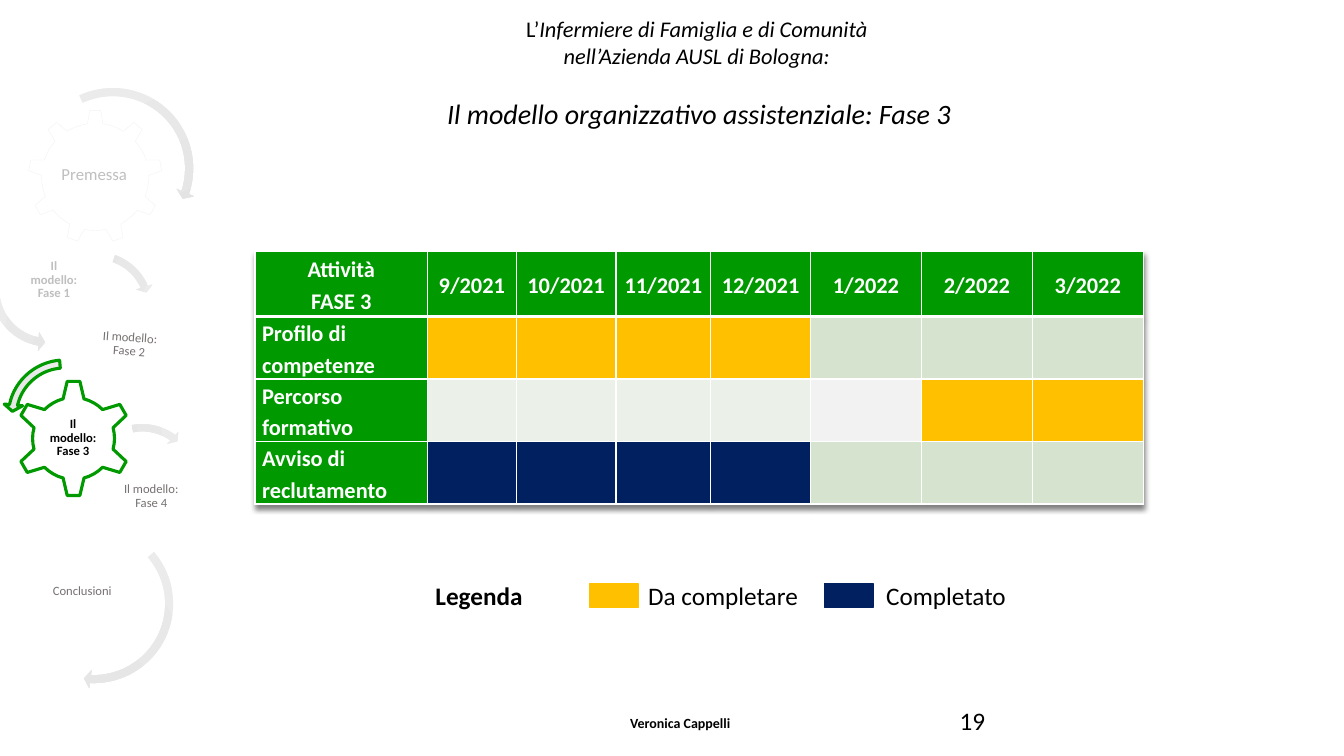
import pptx
import pptx.util
import pptx.dml.color
import pptx.enum.shapes
import pptx.enum.text
import pptx.oxml

Pt = pptx.util.Pt
Kind = pptx.enum.shapes.MSO_SHAPE
Align = pptx.enum.text.PP_ALIGN
Anchor = pptx.enum.text.MSO_ANCHOR
NS = 'xmlns:a="http://schemas.openxmlformats.org/drawingml/2006/main"'
GREEN, GOLD, NAVY = "009900", "FFC000", "002060"
SAGE, MIST, PALE = "D5E3CF", "EBF1E9", "F2F2F2"
WHITE, BLACK, GRAY, SILVER = "FFFFFF", "000000", "767171", "BFBFBF"


def tint(code):
    return pptx.dml.color.RGBColor.from_string(code)


class Page:
    font = "Calibri"
    cols, rows = 13.33, 7.5

    def __init__(self, deck):
        self.slide = deck.slides.add_slide(deck.slide_layouts[5])
        self.host = self.slide.shapes
        self.col = deck.slide_width / self.cols
        self.row = deck.slide_height / self.rows

    def box(self, x, y, w, h):
        return [round(n) for n in (x * self.col, y * self.row, w * self.col, h * self.row)]

    def group(self):
        self.host = self.slide.shapes.add_group_shape().shapes

    def ungroup(self):
        self.host = self.slide.shapes

    def style(self, para, size, color=BLACK, bold=False, italic=False, align=None):
        font = para.font
        font.name, font.size, font.bold, font.italic = self.font, Pt(size), bold, italic
        font.color.rgb = tint(color)
        para.alignment = align

    def title(self, place, lines):
        head = self.slide.shapes.title
        head.left, head.top, head.width, head.height = self.box(*place)
        frame = head.text_frame
        frame.vertical_anchor = Anchor.TOP
        frame.auto_size = pptx.enum.text.MSO_AUTO_SIZE.NONE
        for i, (text, size, gap) in enumerate(lines):
            para = frame.add_paragraph() if i else frame.paragraphs[0]
            self.style(para, size, italic=True, align=Align.CENTER)
            para.space_before = Pt(gap)
            lead, mark, rest = text.partition("L’")
            if mark:
                run = para.add_run()
                run.text, run.font.italic = mark, False
            para.add_run().text = rest if mark else lead

    def text(self, place, text, size, color=BLACK, bold=False, align=None):
        item = self.host.add_textbox(*self.box(*place))
        frame = item.text_frame
        frame.word_wrap = True
        frame.text = text
        self.style(frame.paragraphs[0], size, color, bold, align=align)
        return item

    def label(self, place, text, size=9, color=GRAY, bold=False, turn=0):
        item = self.text(place, text, size, color, bold, Align.CENTER)
        item.rotation = turn
        frame = item.text_frame
        frame.vertical_anchor = Anchor.MIDDLE
        frame.margin_left = frame.margin_right = round(0.01 * self.col)
        frame.margin_top = frame.margin_bottom = round(0.01 * self.row)
        frame.paragraphs[0].line_spacing = 0.9

    def shape(self, kind, place, fill=None, line=None, width=1, turn=0):
        item = self.host.add_shape(kind, *self.box(*place))
        item.shadow.inherit = False
        item.rotation = turn
        if fill:
            item.fill.solid()
            item.fill.fore_color.rgb = tint(fill)
        else:
            item.fill.background()
        if line:
            item.line.color.rgb = tint(line)
            item.line.width = Pt(width)
        else:
            item.line.fill.background()
        return item

    def arc(self, kind, x, y, size, turn, bend, line=None):
        item = self.shape(kind, (x, y, size, size), None, line, 2.25, turn)
        for i, value in enumerate(bend):
            item.adjustments[i] = value
        item.fill.gradient()
        item.fill.gradient_angle = 270
        for stop, code in zip(item.fill.gradient_stops, ("EDEDED", "E1E1E1")):
            stop.color.rgb = tint(code)

    def border(self, cell, sides):
        props = cell._tc.get_or_add_tcPr()
        for i, (side, width) in enumerate(sides.items()):
            props.insert(i, pptx.oxml.parse_xml(
                f'<a:ln{side} {NS} w="{Pt(width)}"><a:solidFill>'
                f'<a:srgbClr val="{WHITE}"/></a:solidFill></a:ln{side}>'))

    def table(self, place, widths, heights, texts, fills):
        frame = self.slide.shapes.add_table(len(heights), len(widths), *self.box(*place))
        grid = frame.table
        for part, width in zip(grid.columns, widths):
            part.width = round(width * self.col)
        for part, height in zip(grid.rows, heights):
            part.height = round(height * self.row)
        grid._tbl.tblPr.insert(0, pptx.oxml.parse_xml(
            f'<a:effectLst {NS}><a:outerShdw blurRad="50800" dist="38100" dir="5400000" '
            'algn="t" rotWithShape="0"><a:srgbClr val="000000"><a:alpha val="50000"/>'
            '</a:srgbClr></a:outerShdw></a:effectLst>'))
        for r, colors in enumerate(fills):
            for c, color in enumerate(colors):
                cell = grid.cell(r, c)
                cell.fill.solid()
                cell.fill.fore_color.rgb = tint(color)
                self.border(cell, {"L": 1, "R": 1, "T": 3 if r == 1 else 1, "B": 1 if r else 3})
                if c >= len(texts[r]):
                    continue
                cell.text = texts[r][c]
                cell.margin_left = cell.margin_right = round(0.07 * self.col)
                cell.margin_top = cell.margin_bottom = 0
                cell.vertical_anchor = Anchor.TOP if r else Anchor.MIDDLE
                for para in cell.text_frame.paragraphs:
                    self.style(para, 16, WHITE, True, align=None if r else Align.CENTER)
                    para.line_spacing = 1.15


def main():
    deck = pptx.Presentation()
    deck.slide_width = pptx.util.Inches(Page.cols)
    deck.slide_height = pptx.util.Inches(Page.rows)
    page = Page(deck)
    page.title((2.42, 0.1, 9.03, 1.25), [
        ("L’Infermiere di Famiglia e di Comunità ", 16, 0),
        ("nell’Azienda AUSL di Bologna: ", 16, 0),
        ("Il modello organizzativo assistenziale: Fase 3", 20, 19.5)])

    right, left = Kind.CIRCULAR_ARROW, Kind.LEFT_CIRCULAR_ARROW
    wide = (0.047, 2.99, 24.36, 160.47, 0.055)
    back = (0.065, 4.3, 104.89, 148.38, 0.075)
    short = (0.06, 3.94, 133.14, 105.08, 0.07)

    page.group()
    page.shape(Kind.GEAR_9, (0.28, 1.09, 1.33, 1.33), line=PALE, width=0.25)
    page.label((0.54, 1.4, 0.79, 0.68), "Premessa", 12, SILVER)
    page.label((0.27, 2.52, 0.53, 0.52), "Il modello: Fase 1", color=SILVER, bold=True)
    page.shape(Kind.GEAR_6, (0.76, 2.89, 1.05, 1.07), WHITE, turn=349)
    page.label((0.99, 3.12, 0.59, 0.6), "Il modello: Fase 2", turn=4)
    page.arc(right, 0.27, 0.82, 1.7, 337.9, wide)
    page.arc(left, -0.14, 2.25, 1.24, 285.8, back)
    page.arc(right, 0.35, 2.45, 1.21, 114.5, short)

    page.group()
    page.shape(Kind.GEAR_9, (0.15, 5.22, 1.31, 1.31), WHITE)
    page.label((0.42, 5.53, 0.79, 0.68), "Conclusioni")
    page.shape(Kind.GEAR_6, (0.15, 3.77, 1.16, 1.16), WHITE, GREEN, 2.25)
    page.label((0.44, 4.06, 0.57, 0.57), "Il modello: Fase 3", color=BLACK, bold=True)
    page.shape(Kind.GEAR_6, (0.99, 4.39, 1.04, 1.06), WHITE, turn=345)
    page.label((1.21, 4.63, 0.58, 0.59), "Il modello: Fase 4")
    page.arc(right, 0.09, 5.15, 1.68, 51.9, wide)
    page.arc(left, 0.03, 3.52, 1.22, 17.7, back, GREEN)
    page.arc(right, 0.81, 4.16, 1.2, 84.1, short)
    page.ungroup()

    page.text((6, 7.04, 1.34, 0.27), "Veronica Cappelli", 10, bold=True, align=Align.RIGHT)
    months = ["9/2021", "10/2021", "11/2021", "12/2021", "1/2022", "2/2022", "3/2022"]
    page.table(
        (2.53, 2.49, 8.81, 2.52),
        [1.71, 0.88, 0.99, 0.94, 0.99] + [1.1] * 3,
        [0.65] + [0.62] * 3,
        [["Attività\nFASE 3"] + months, ["Profilo di competenze"],
         ["Percorso formativo"], ["Avviso di reclutamento"]],
        [[GREEN] * 8,
         [GREEN] + [GOLD] * 4 + [SAGE] * 3,
         [GREEN] + [MIST] * 4 + [PALE] + [GOLD] * 2,
         [GREEN] + [NAVY] * 4 + [SAGE] * 3])

    page.text((4.22, 5.71, 1.48, 0.4), "Legenda", 18, bold=True)
    for x, color, start, width, name in ((5.85, GOLD, 6.33, 1.85, "Da completare"),
                                         (8.18, NAVY, 8.69, 1.48, "Completato")):
        page.shape(Kind.RECTANGLE, (x, 5.79, 0.48, 0.24), color, color)
        page.text((start, 5.71, width, 0.4), name, 18)
    page.text((9.42, 6.95, 3, 0.4), "19", 18)
    deck.save("out.pptx")


if __name__ == "__main__":
    main()
